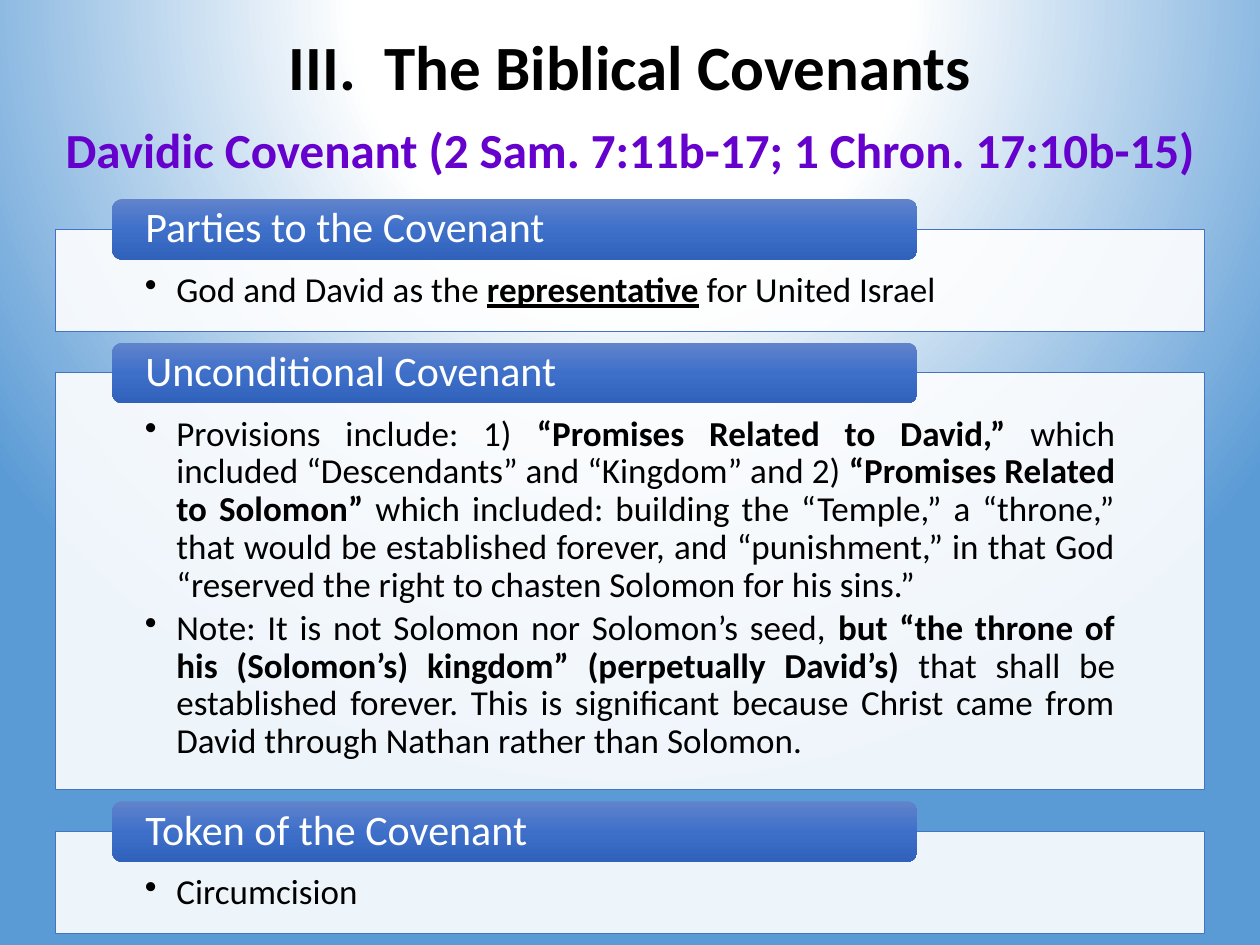
"""Build a slide on the Davidic Covenant with three titled panels."""
from pptx import Presentation
from pptx.dml.color import RGBColor
from pptx.enum.shapes import MSO_SHAPE
from pptx.enum.text import MSO_ANCHOR, MSO_AUTO_SIZE, PP_ALIGN
from pptx.oxml import parse_xml
from pptx.oxml.ns import qn
from pptx.util import Inches, Pt
from lxml.etree import SubElement

FONT = "Calibri"
COLORS = {"text": "000000", "subtitle": "6600CC", "white": "FFFFFF", "line": "4472C4"}
BACKGROUND_STOPS = [(0, "FFFFFF"), (35, "FFFFFF"), (100, "5B9BD5")]
TAB_STOPS = [(0, "6183CB"), (50, "3E70CA"), (100, "3062BB")]
BACKGROUND_SHADE = (
    '<a:path path="circle">'
    '<a:fillToRect l="50000" t="-80000" r="50000" b="180000"/></a:path>'
)
TAB_SHADE = '<a:lin ang="5400000" scaled="0"/>'

TITLE = "The Biblical Covenants"
SUBTITLE = "Davidic Covenant (2 Sam. 7:11b-17; 1 Chron. 17:10b-15)"
PANELS = [
    ("Parties to the Covenant", 0.81, PP_ALIGN.LEFT, [
        [("God and David as the ", ""), ("representative", "bu"),
         (" for United Israel", "")],
    ]),
    ("Unconditional Covenant", 3.31, PP_ALIGN.JUSTIFY, [
        [("Provisions include: 1) ", ""),
         ("“Promises Related to David,” ", "b"),
         ("which included “Descendants” and “Kingdom” and 2) ", ""),
         ("“Promises Related to Solomon”", "b"),
         (" which included: building the “Temple,” a “throne,” that would be "
          "established forever, and “punishment,” in that God “reserved the right "
          "to chasten Solomon for his sins.”", "")],
        [("Note: It is not Solomon nor Solomon’s seed, ", ""),
         ("but “the throne of his (Solomon’s) kingdom” (perpetually David’s)", "b"),
         (" that shall be established forever. This is significant because Christ "
          "came from David through Nathan rather than Solomon.", "")],
    ]),
    ("Token of the Covenant", 0.81, PP_ALIGN.LEFT, [[("Circumcision", "")]]),
]
PANEL_LEFT, PANEL_WIDTH, FIRST_TOP, PANEL_GAP = 0.44, 9.12, 1.82, 0.33
TAB_LEFT, TAB_WIDTH, TAB_HEIGHT = 0.89, 6.39, 0.48


def set_gradient(properties, stops, shade):
    stop_xml = "".join(
        f'<a:gs pos="{position * 1000}"><a:srgbClr val="{color}"/></a:gs>'
        for position, color in stops
    )
    gradient = parse_xml(
        '<a:gradFill xmlns:a="http://schemas.openxmlformats.org/drawingml/2006/main" '
        f'rotWithShape="1"><a:gsLst>{stop_xml}</a:gsLst>{shade}</a:gradFill>'
    )
    properties.replace(properties.find(qn("a:solidFill")), gradient)


def set_frame(box, anchor, insets=(0.1, 0.05, 0.1, 0.05)):
    frame = box.text_frame
    frame.word_wrap = True
    frame.vertical_anchor = anchor
    (frame.margin_left, frame.margin_top,
     frame.margin_right, frame.margin_bottom) = map(Inches, insets)
    return frame


def add_span(paragraph, text, size, color, style=""):
    span = paragraph.add_run()
    span.text = text
    span.font.name = FONT
    span.font.size = Pt(size)
    span.font.color.rgb = RGBColor.from_string(COLORS[color])
    span.font.bold = "b" in style
    span.font.underline = "u" in style


def set_space_after(paragraph, percent):
    spacing = SubElement(paragraph._p.get_or_add_pPr(), qn("a:spcAft"))
    SubElement(spacing, qn("a:spcPct"), val=str(percent * 1000))


def set_bullet(paragraph, indent, tag, **settings):
    properties = paragraph._p.get_or_add_pPr()
    properties.set("marL", str(Inches(indent)))
    properties.set("indent", str(-Inches(indent)))
    SubElement(properties, qn(tag), **settings)


def add_panel_shape(page, kind, left, top, width, height):
    shape = page.shapes.add_shape(
        kind, Inches(left), Inches(top), Inches(width), Inches(height))
    shape.shadow.inherit = False
    shape.fill.solid()
    shape.fill.fore_color.rgb = RGBColor.from_string(COLORS["white"])
    return shape


def add_body(page, top, height, alignment, paragraphs):
    body = add_panel_shape(
        page, MSO_SHAPE.RECTANGLE, PANEL_LEFT, top, PANEL_WIDTH, height)
    color = body._element.spPr.find(qn("a:solidFill"))[0]
    SubElement(color, qn("a:alpha"), val="90000")
    body.line.color.rgb = RGBColor.from_string(COLORS["line"])
    body.line.width = Pt(0.5)
    frame = set_frame(body, MSO_ANCHOR.TOP, (0.71, 0.34, 0.71, 0.16))
    for index, spans in enumerate(paragraphs):
        paragraph = frame.add_paragraph() if index else frame.paragraphs[0]
        set_space_after(paragraph, 15)
        set_bullet(paragraph, 0.25, "a:buChar", char="•")
        paragraph.level = 1
        paragraph.alignment = alignment
        paragraph.line_spacing = 0.9
        for text, style in spans:
            add_span(paragraph, text, 20, "text", style)


def add_tab(page, top, heading):
    tab = add_panel_shape(
        page, MSO_SHAPE.ROUNDED_RECTANGLE, TAB_LEFT, top, TAB_WIDTH, TAB_HEIGHT)
    set_gradient(tab._element.spPr, TAB_STOPS, TAB_SHADE)
    tab.line.fill.background()
    frame = set_frame(tab, MSO_ANCHOR.MIDDLE, (0.24, 0, 0.24, 0))
    paragraph = frame.paragraphs[0]
    set_space_after(paragraph, 35)
    paragraph.alignment = PP_ALIGN.LEFT
    paragraph.line_spacing = 0.9
    add_span(paragraph, heading, 24, "white")


def add_headings(page):
    box = page.shapes.add_textbox(Inches(0.4), Inches(0.9), Inches(9.2), Inches(0.57))
    frame = set_frame(box, MSO_ANCHOR.TOP)
    frame.auto_size = MSO_AUTO_SIZE.SHAPE_TO_FIT_TEXT
    paragraph = frame.paragraphs[0]
    paragraph.alignment = PP_ALIGN.CENTER
    add_span(paragraph, SUBTITLE, 28, "subtitle", "b")

    box = page.shapes.add_textbox(Inches(1.25), Inches(0.22), Inches(7.5), Inches(0.68))
    paragraph = set_frame(box, MSO_ANCHOR.MIDDLE).paragraphs[0]
    set_bullet(paragraph, 0.76, "a:buAutoNum", type="romanUcPeriod", startAt="3")
    paragraph.alignment = PP_ALIGN.CENTER
    paragraph.line_spacing = 0.9
    add_span(paragraph, TITLE, 36, "text", "b")


def main():
    deck = Presentation()
    deck.slide_width, deck.slide_height = Inches(10), Inches(7.5)
    page = deck.slides.add_slide(deck.slide_layouts[6])
    page.background.fill.solid()
    background = page._element.cSld.find(qn("p:bg")).find(qn("p:bgPr"))
    set_gradient(background, BACKGROUND_STOPS, BACKGROUND_SHADE)
    top = FIRST_TOP
    for heading, height, alignment, paragraphs in PANELS:
        add_body(page, top, height, alignment, paragraphs)
        add_tab(page, top - TAB_HEIGHT / 2, heading)
        top += height + PANEL_GAP
    add_headings(page)
    deck.save("out.pptx")


if __name__ == "__main__":
    main()
